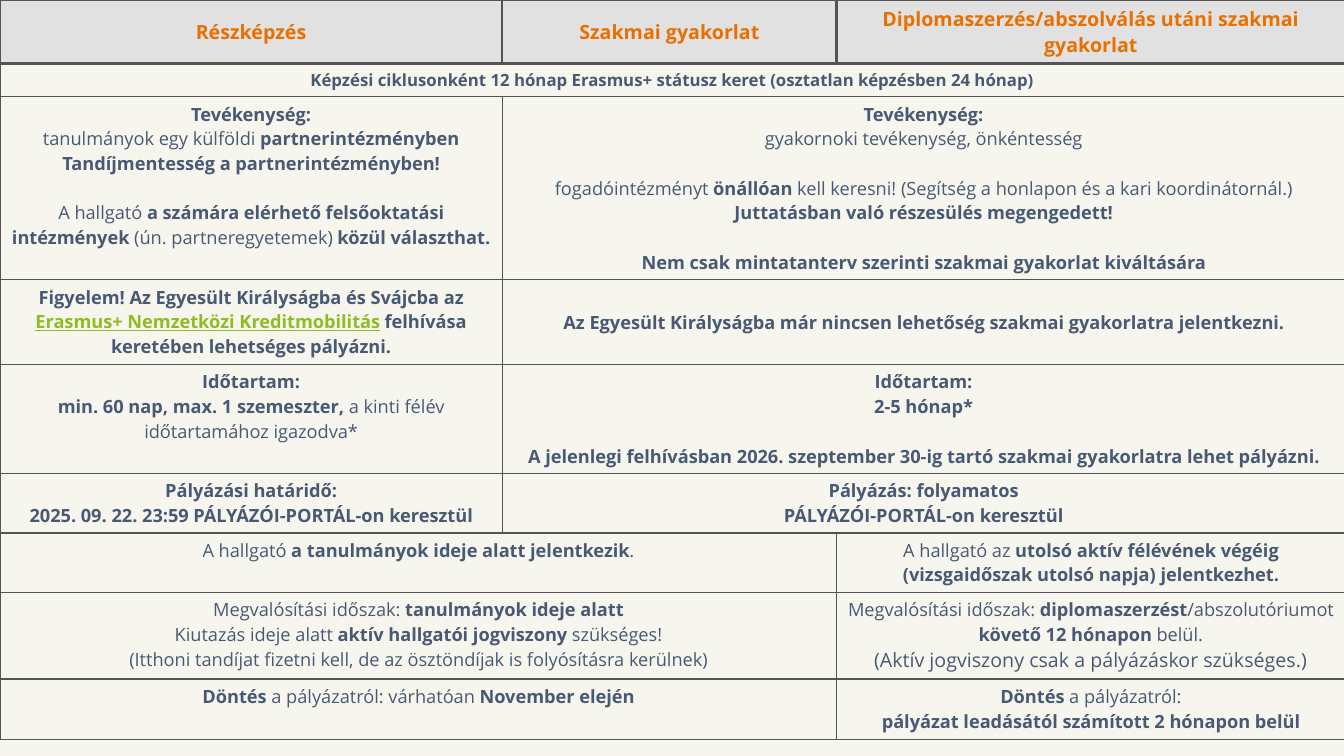
from pptx import Presentation
from pptx.dml.color import RGBColor
from pptx.enum.text import MSO_ANCHOR, PP_ALIGN
from pptx.oxml import parse_xml
from pptx.oxml.ns import nsdecls
from pptx.util import Inches, Pt

BACKGROUND = RGBColor(0xF7, 0xF6, 0xEE)
HEADER_FILL = RGBColor(0xE1, 0xE1, 0xE1)
ORANGE = RGBColor(0xE8, 0x6F, 0x00)
NAVY = RGBColor(0x48, 0x59, 0x74)
GREEN = RGBColor(0x90, 0xBB, 0x23)
BORDER = RGBColor(0x54, 0x54, 0x54)

THIN, THICK = Pt(1), Pt(2.25)
BLANK_LINE = Pt(17.7)
COLUMN_WIDTHS = [4.98, 3.32, 5.04]
ROW_HEIGHTS = [0.63, 0.33, 1.81, 0.84, 1.08, 0.59, 0.59, 0.86, 0.6]

# Each row lists (column span, text). Bars enclose bold text, carets enclose
# link-styled text, # starts a larger line, and an empty line makes a gap.
ROWS = [
    [(1, "|Részképzés|"), (1, "|Szakmai gyakorlat|"),
     (1, "|Diplomaszerzés/abszolválás utáni szakmai gyakorlat|")],
    [(3, "|Képzési ciklusonként 12 hónap Erasmus+ státusz keret "
         "(osztatlan képzésben 24 hónap)|")],
    [(1, "|Tevékenység:|\n"
         "tanulmányok egy külföldi |partnerintézményben|\n"
         "|Tandíjmentesség a partnerintézményben!|\n\n"
         "A hallgató |a számára elérhető felsőoktatási intézmények| "
         "(ún. partneregyetemek) |közül választhat.|"),
     (2, "|Tevékenység:|\n"
         "gyakornoki tevékenység, önkéntesség\n\n"
         "fogadóintézményt |önállóan| kell keresni! "
         "(Segítség a honlapon és a kari koordinátornál.)\n"
         "|Juttatásban való részesülés megengedett!|\n\n"
         "|Nem csak mintatanterv szerinti szakmai gyakorlat kiváltására|")],
    [(1, "|Figyelem! Az Egyesült Királyságba és Svájcba az "
         "^Erasmus+ Nemzetközi Kreditmobilitás^ felhívása "
         "keretében lehetséges pályázni.|"),
     (2, "|Az Egyesült Királyságba már nincsen lehetőség "
         "szakmai gyakorlatra jelentkezni.|")],
    [(1, "|Időtartam:|\n"
         "|min. 60 nap, max. 1 szemeszter, |a kinti félév időtartamához igazodva*"),
     (2, "|Időtartam:|\n|2-5 hónap*|\n\n"
         "|A jelenlegi felhívásban 2026. szeptember 30-ig tartó "
         "szakmai gyakorlatra lehet pályázni.|")],
    [(1, "|Pályázási határidő:|\n|2025. 09. 22. 23:59 PÁLYÁZÓI-PORTÁL-on keresztül|"),
     (2, "|Pályázás: folyamatos|\n|PÁLYÁZÓI-PORTÁL-on keresztül|")],
    [(2, "A hallgató |a tanulmányok ideje alatt jelentkezik|."),
     (1, "A hallgató az |utolsó aktív félévének végéig "
         "(vizsgaidőszak utolsó napja) jelentkezhet.|")],
    [(2, "Megvalósítási időszak: |tanulmányok ideje alatt|\n"
         "Kiutazás ideje alatt |aktív hallgatói jogviszony| szükséges!\n"
         "(Itthoni tandíjat fizetni kell, de az ösztöndíjak is folyósításra kerülnek)"),
     (1, "Megvalósítási időszak: |diplomaszerzést|/abszolutóriumot "
         "|követő 12 hónapon| belül.\n"
         "#(Aktív jogviszony csak a pályázáskor szükséges.)")],
    [(2, "|Döntés| a pályázatról: várhatóan |November elején|"),
     (1, "|Döntés| a pályázatról:\n"
         "|pályázat leadásától számított 2 hónapon belül|")],
]
ROW_SIZES = {0: 14, 1: 12}
MIDDLE_CELLS = {(0, 0), (0, 1), (0, 2), (3, 1)}


class SlideBuilder:
    def __init__(self, slide):
        self.slide = slide
        self.font_name = "Open Sans"
        fill = slide.background.fill
        fill.solid()
        fill.fore_color.rgb = BACKGROUND

    def add_run(self, paragraph, text, size, color, bold, link):
        run = paragraph.add_run()
        run.text = text
        font_format = {"name": self.font_name, "size": Pt(size),
                       "bold": bold, "underline": link}
        for name, value in font_format.items():
            setattr(run.font, name, value)
        run.font.color.rgb = GREEN if link else color

    def write_text(self, text_frame, text, size, color):
        paragraph, gap = text_frame.paragraphs[0], False
        for number, line in enumerate(text.split("\n")):
            if not line:
                gap = True
                continue
            if number:
                paragraph = text_frame.add_paragraph()
            paragraph.alignment = PP_ALIGN.CENTER
            if gap:
                paragraph.space_before, gap = BLANK_LINE, False
            line_size = 14 if line.startswith("#") else size
            for bold, part in enumerate(line.removeprefix("#").split("|")):
                for link, piece in enumerate(part.split("^")):
                    if piece:
                        self.add_run(paragraph, piece, line_size, color,
                                     bold % 2 == 1, link % 2 == 1)

    def add_borders(self, cell, thick_sides):
        properties = cell._tc.get_or_add_tcPr()
        for side in "LRTB":
            width = THICK if side in thick_sides else THIN
            properties.append(parse_xml(
                f'<a:ln{side} {nsdecls("a")} w="{width}"><a:solidFill>'
                f'<a:srgbClr val="{BORDER}"/></a:solidFill></a:ln{side}>'))

    def style_cell(self, cell, row, column):
        thick_sides = {0: ["RB", "LRB", "LB"][column], 1: "T"}.get(row, "")
        self.add_borders(cell, thick_sides)
        if row == 0:
            cell.fill.solid()
            cell.fill.fore_color.rgb = HEADER_FILL
        else:
            cell.fill.background()
        if (row, column) in MIDDLE_CELLS:
            cell.vertical_anchor = MSO_ANCHOR.MIDDLE

    def add_table(self, rows, widths, heights):
        shape = self.slide.shapes.add_table(
            len(rows), len(widths), Inches(0), Inches(0),
            Inches(sum(widths)), Inches(sum(heights)))
        table = shape.table
        table.first_row = table.horz_banding = False
        for column, width in zip(table.columns, widths):
            column.width = Inches(width)
        for row, height in zip(table.rows, heights):
            row.height = Inches(height)
        for row, entries in enumerate(rows):
            for column in range(len(widths)):
                self.style_cell(table.cell(row, column), row, column)
            column = 0
            for span, text in entries:
                cell = table.cell(row, column)
                if span > 1:
                    cell.merge(table.cell(row, column + span - 1))
                self.write_text(cell.text_frame, text, ROW_SIZES.get(row, 13),
                                NAVY if row else ORANGE)
                column += span


def main():
    presentation = Presentation()
    presentation.slide_width = Inches(13.33)
    presentation.slide_height = Inches(7.5)
    slide = presentation.slides.add_slide(presentation.slide_layouts[6])

    # Comparison of the mobility types
    SlideBuilder(slide).add_table(ROWS, COLUMN_WIDTHS, ROW_HEIGHTS)
    presentation.save("out.pptx")


if __name__ == "__main__":
    main()
